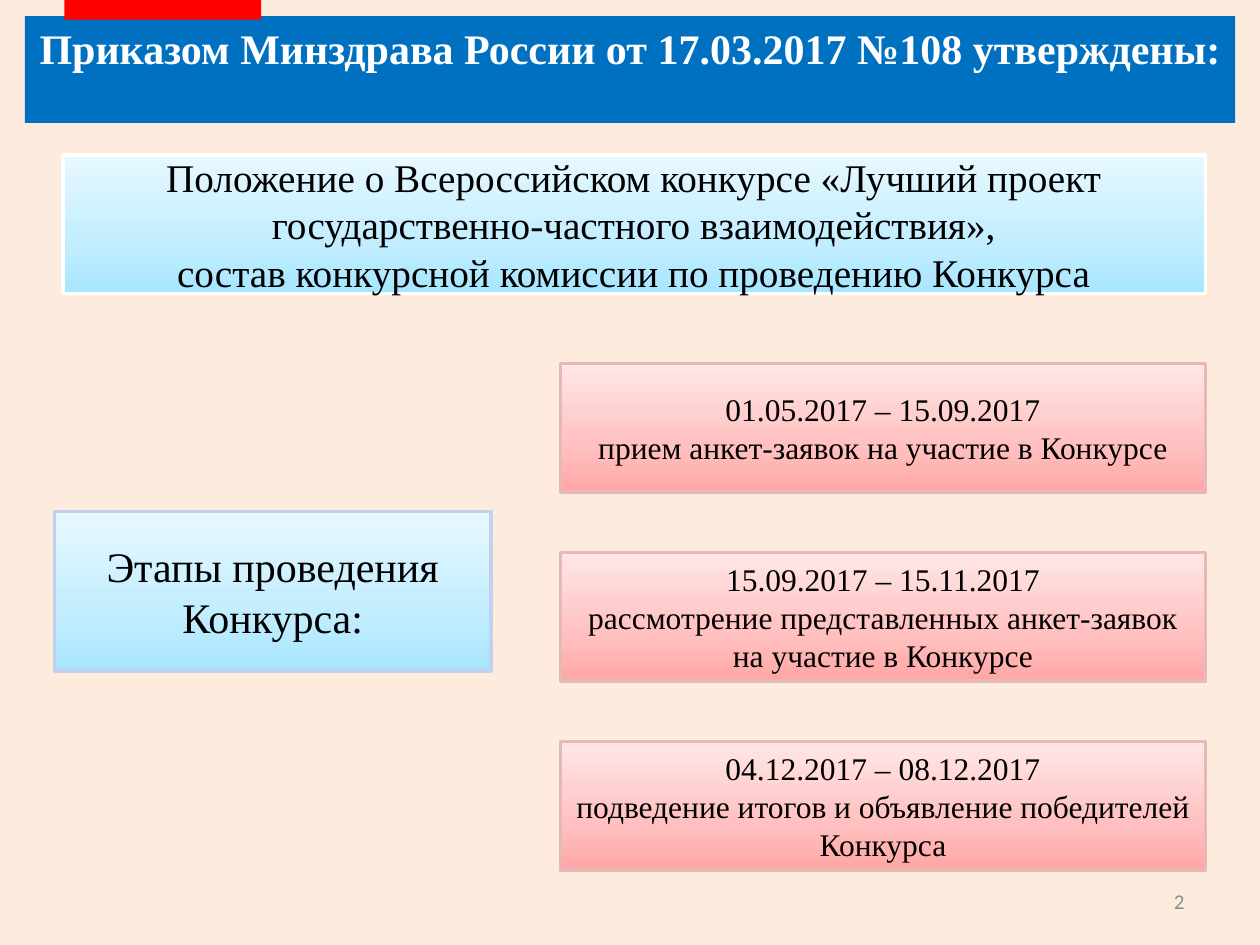
"""Build the slide on the approved contest rules and the stages of the contest."""
from copy import deepcopy

from pptx import Presentation
from pptx.dml.color import RGBColor
from pptx.enum.shapes import MSO_SHAPE as SHAPE
from pptx.enum.text import MSO_ANCHOR as ANCHOR, PP_ALIGN as ALIGN
from pptx.oxml.ns import qn
from pptx.util import Pt

COLORS = {
    "background": "FDEBDD",
    "title": "0070C0",
    "tab": "FF0000",
    "white": "FFFFFF",
    "black": "000000",
    "number": "8C8C8C",
    "blue_line": "C2D1ED",
    "pink_line": "E6B9B8",
}
GRADIENTS = {
    "blue": ("A7E6FF", "C1EDFF", "E7F8FF"),
    "pink": ("FFA6A5", "FFC0BF", "FFE7E7"),
}
STOPS = (0, 0.35, 1)
STAGES = [
    ("01.05.2017 – 15.09.2017", "прием анкет-заявок на участие в Конкурсе"),
    ("15.09.2017 – 15.11.2017",
     "рассмотрение представленных анкет-заявок на участие в Конкурсе"),
    ("04.12.2017 – 08.12.2017",
     "подведение итогов и объявление победителей Конкурса"),
]


def rgb(name):
    return RGBColor.from_string(COLORS[name])


def write(sp, lines, size, color="black", font="Times New Roman",
          bold=False, align=ALIGN.CENTER, anchor=ANCHOR.MIDDLE):
    tf = sp.text_frame
    tf.word_wrap = True
    tf.vertical_anchor = anchor
    tf.text = "\n".join(lines)
    for p in tf.paragraphs:
        p.alignment = align
        p.font.name = font
        p.font.size = Pt(size)
        p.font.bold = bold
        p.font.color.rgb = rgb(color)


def add_rect(slide, box):
    sp = slide.shapes.add_shape(SHAPE.RECTANGLE, *map(Pt, box))
    sp.shadow.inherit = False
    return sp


def add_bar(slide, box, color):
    sp = add_rect(slide, box)
    sp.fill.solid()
    sp.fill.fore_color.rgb = rgb(color)
    sp.line.fill.background()
    return sp


def add_panel(slide, box, gradient, line, lines, size):
    sp = add_rect(slide, box)
    sp.fill.gradient()
    sp.fill.gradient_angle = 90
    stop_list = sp._element.spPr.find(qn("a:gradFill")).find(qn("a:gsLst"))
    stop_list.append(deepcopy(stop_list[-1]))
    for stop, position, color in zip(sp.fill.gradient_stops, STOPS, GRADIENTS[gradient]):
        stop.position = position
        stop.color.rgb = RGBColor.from_string(color)
    sp.line.color.rgb = rgb(line)
    sp.line.width = Pt(2)
    write(sp, lines, size)


def add_number(slide, box, text):
    sp = slide.shapes.add_textbox(*map(Pt, box))
    write(sp, [text], 12, "number", "Calibri", align=ALIGN.RIGHT)


def main():
    prs = Presentation()
    prs.slide_width, prs.slide_height = Pt(720), Pt(540)
    slide = prs.slides.add_slide(prs.slide_layouts[6])
    slide.background.fill.solid()
    slide.background.fill.fore_color.rgb = rgb("background")

    title = add_bar(slide, (14.2, 9.2, 691.6, 61), "title")
    write(title, ["Приказом Минздрава России от 17.03.2017 №108 утверждены:"],
          24, "white", bold=True, anchor=ANCHOR.TOP)
    add_panel(slide, (36, 88.6, 653, 79.2), "blue", "white", [
        "Положение о Всероссийском конкурсе «Лучший проект "
        "государственно-частного взаимодействия»,",
        "состав конкурсной комиссии по проведению Конкурса"], 22.4)
    add_number(slide, (516, 500.5, 168, 28.8), "2")
    add_bar(slide, (36.8, 0, 112.4, 11.2), "tab")
    add_panel(slide, (31, 292.4, 249.6, 91), "blue", "blue_line",
              ["Этапы проведения Конкурса:"], 24)
    for i, stage in enumerate(STAGES):
        add_panel(slide, (320.2, 207.6 + 108 * i, 368.8, 73.6), "pink",
                  "pink_line", stage, 18)
    prs.save("out.pptx")


if __name__ == "__main__":
    main()
